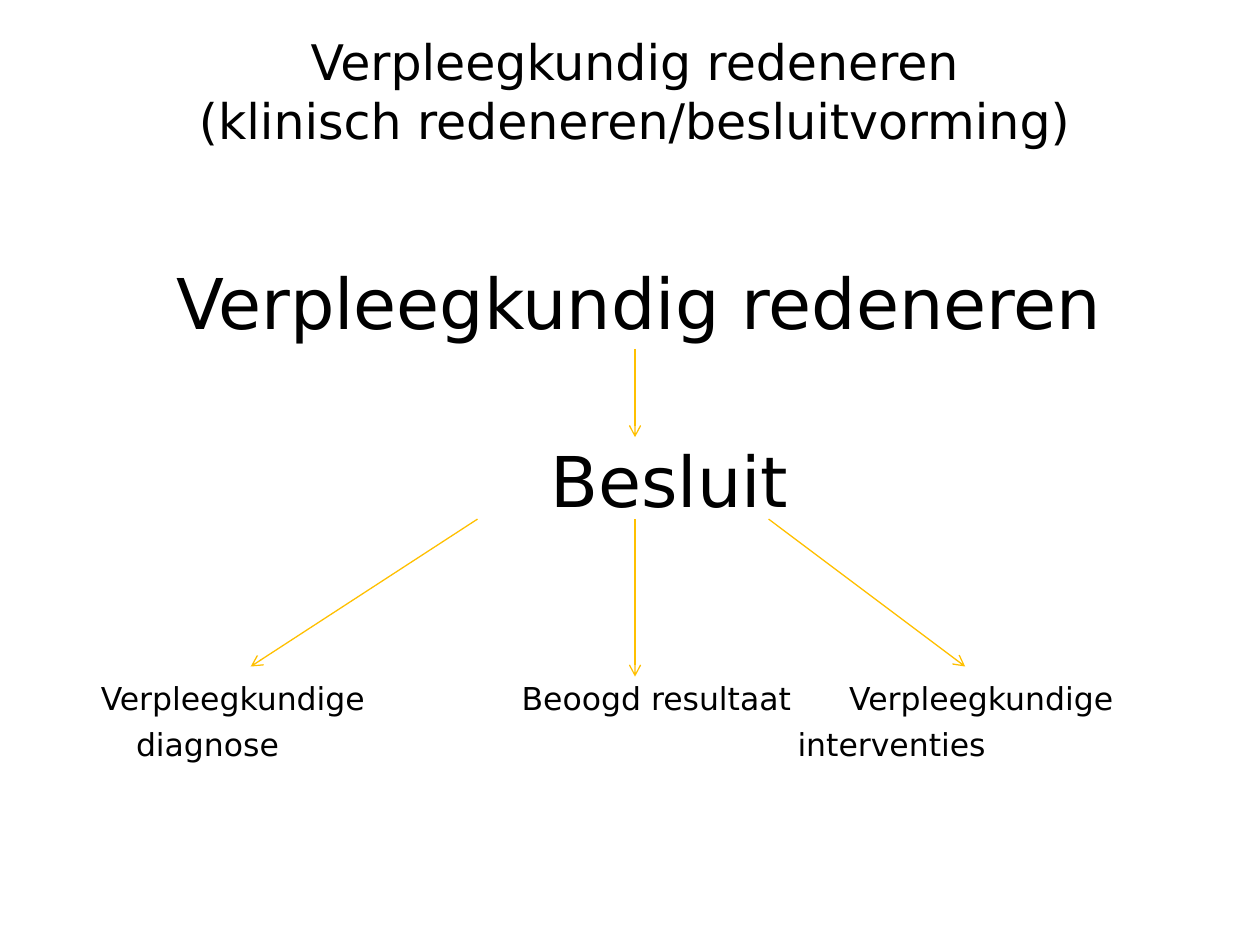
from lxml.etree import SubElement
from pptx import Presentation
from pptx.dml.color import RGBColor
from pptx.enum.shapes import MSO_CONNECTOR
from pptx.enum.text import MSO_ANCHOR, PP_ALIGN
from pptx.oxml.ns import qn
from pptx.util import Inches, Pt

FONT, INK, GOLD = "DejaVu Sans", "000000", "FFC000"


def grid(n):
    """Length of n cells; the slide is 100 columns by 75 rows."""
    return Inches(n / 10)


def paint(code):
    return RGBColor.from_string(code)


def write(slide, box, lines, size, align=PP_ALIGN.LEFT, indents=(0, 0)):
    """Text box without margins; one paragraph per line."""
    frame = slide.shapes.add_textbox(*map(grid, box)).text_frame
    frame.word_wrap = True
    frame.vertical_anchor = MSO_ANCHOR.TOP
    frame.margin_left = frame.margin_right = 0
    frame.margin_top = frame.margin_bottom = 0
    for i, (line, indent) in enumerate(zip(lines, indents)):
        para = frame.add_paragraph() if i else frame.paragraphs[0]
        para.text = line
        para.alignment = align
        if i:
            para.space_before = Pt(size / 4)
        if indent:
            para._p.get_or_add_pPr().set("marL", str(grid(indent)))
        para.font.name = FONT
        para.font.size = Pt(size)
        para.font.color.rgb = paint(INK)
    return frame


def arrow(slide, start, end):
    line = slide.shapes.add_connector(
        MSO_CONNECTOR.STRAIGHT, *map(grid, start + end))
    line.line.color.rgb = paint(GOLD)
    line.line.width = Pt(0.75)
    SubElement(line.line._get_or_add_ln(), qn("a:tailEnd"), type="arrow")
    SubElement(line._element.spPr, qn("a:effectLst"))


def title(slide, box):
    text = "Verpleegkundig redeneren\v(klinisch redeneren/besluitvorming)"
    frame = write(slide, box, [text], 28, PP_ALIGN.CENTER)
    frame.vertical_anchor = MSO_ANCHOR.MIDDLE


def tree(slide, box):
    """Reasoning leads to a decision, which leads to three outcomes."""
    left, top, wide, high = box
    mid = left + wide / 2

    # Reasoning and decision
    write(slide, (left, top, wide, 6.5), ["Verpleegkundig redeneren"], 40,
          PP_ALIGN.CENTER)
    write(slide, (mid - 7, top + 14.1, 24, 6.5), ["Besluit"], 40)

    # Outcomes: offset from the middle, lines, indent of each line
    leaves = [
        (-42.7, ["Verpleegkundige", "diagnose"], (0, 2.8)),
        (-9.3, ["Beoogd resultaat"], (0,)),
        (12.6, ["Verpleegkundige", "interventies"], (4.1, 0)),
    ]
    for shift, lines, indents in leaves:
        spot = (mid + shift, top + high - 6.5, 26, 6.5)
        write(slide, spot, lines, 18, indents=indents)

    # Arrows
    stem = mid - 0.3
    arrow(slide, (stem, top + 7.1), (stem, top + 14.1))
    fork = top + 20.6
    for start, end, drop in [(-12.5, -30.5, 11.7), (0, 0, 12.5),
                             (10.6, 26.2, 11.7)]:
        arrow(slide, (stem + start, fork), (stem + end, fork + drop))


def main():
    deck = Presentation()
    deck.slide_width, deck.slide_height = grid(100), grid(75)
    slide = deck.slides.add_slide(deck.slide_layouts[6])
    title(slide, (2.3, 2.1, 96.1, 10.2))
    tree(slide, (3.6, 20.6, 94.2, 39.8))
    deck.save("out.pptx")


if __name__ == "__main__":
    main()
